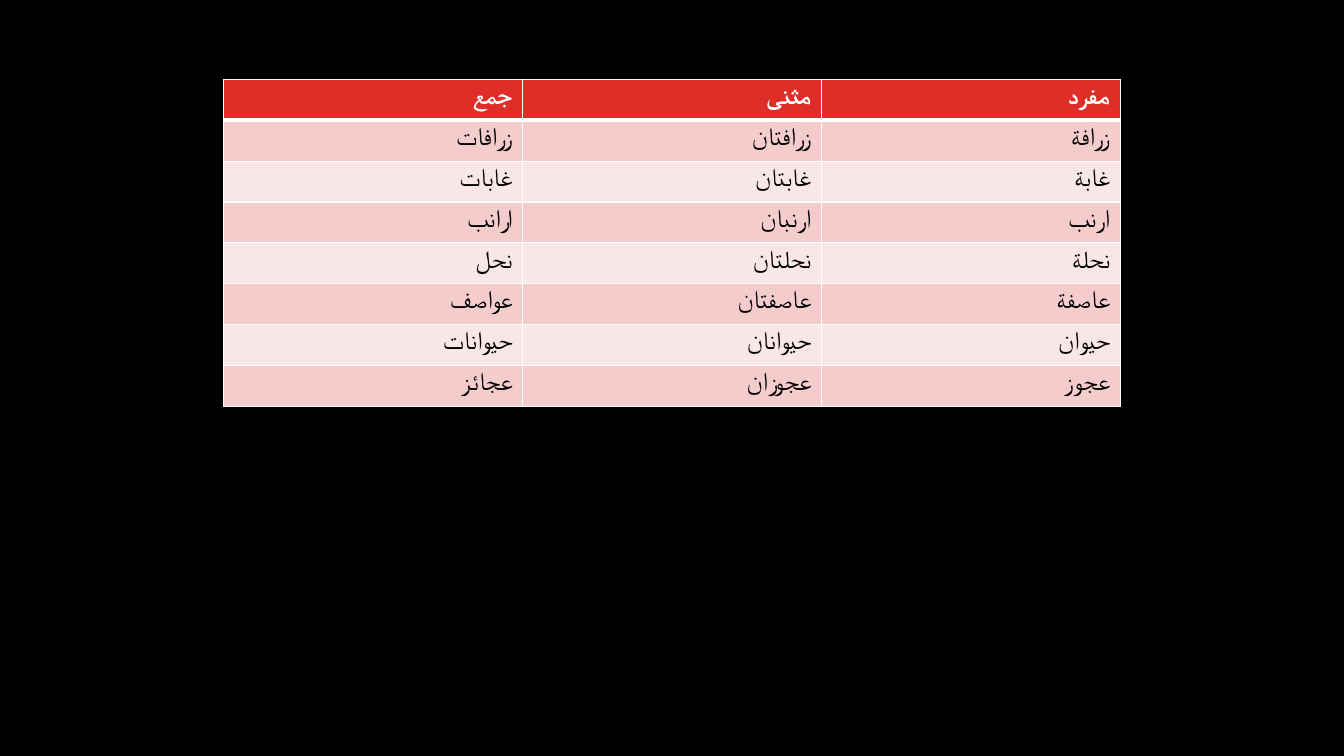
from lxml.etree import SubElement
from pptx import Presentation
from pptx.dml.color import RGBColor
from pptx.enum.text import PP_ALIGN
from pptx.oxml.ns import qn
from pptx.util import Cm, Pt

WORDS = [
    ("جمع", "مثنى", "مفرد"),
    ("زرافات", "زرافتان", "زرافة"),
    ("غابات", "غابتان", "غابة"),
    ("ارانب", "ارنبان", "ارنب"),
    ("نحل", "نحلتان", "نحلة"),
    ("عواصف", "عاصفتان", "عاصفة"),
    ("حيوانات", "حيوانان", "حيوان"),
    ("عجائز", "عجوزان", "عجوز"),
]
HEAD, BANDS = "DF2E28", ("F9E7E7", "F3CCCB")
WHITE, BLACK = "FFFFFF", "000000"
LEFT, TOP, WIDE, HIGH = 5.64, 2, 7.53, 1.03


def paint(fill, tone):
    fill.solid()
    fill.fore_color.rgb = RGBColor.from_string(tone)


def edge(cell, side, width):
    line = SubElement(cell._tc.get_or_add_tcPr(), qn("a:ln" + side), w=str(Pt(width)))
    tone = SubElement(line, qn("a:solidFill"))
    SubElement(tone, qn("a:srgbClr"), val=WHITE)


def write(cell, text, row):
    top = row == 0
    widths = {"L": 1, "R": 1, "T": 3 if row == 1 else 1, "B": 3 if top else 1}
    for side, width in widths.items():
        edge(cell, side, width)
    paint(cell.fill, HEAD if top else BANDS[row % 2])
    para = cell.text_frame.paragraphs[0]
    para.alignment = PP_ALIGN.RIGHT
    para._p.get_or_add_pPr().set("rtl", "1")
    run = para.add_run()
    run.text = text
    look = {"name": "Arial", "size": Pt(18), "bold": top}
    for key, value in look.items():
        setattr(run.font, key, value)
    paint(run.font.fill, WHITE if top else BLACK)


def main():
    deck = Presentation()
    deck.slide_width, deck.slide_height = Cm(33.87), Cm(19.05)
    slide = deck.slides.add_slide(deck.slide_layouts[6])
    paint(slide.background.fill, BLACK)
    rows, cols = len(WORDS), len(WORDS[0])
    table = slide.shapes.add_table(
        rows, cols, Cm(LEFT), Cm(TOP), Cm(WIDE * cols), Cm(HIGH * rows)
    ).table
    for col in table.columns:
        col.width = Cm(WIDE)
    for row, line in enumerate(WORDS):
        table.rows[row].height = Cm(HIGH)
        for col, text in enumerate(line):
            write(table.cell(row, col), text, row)
    deck.save("out.pptx")


if __name__ == "__main__":
    main()
